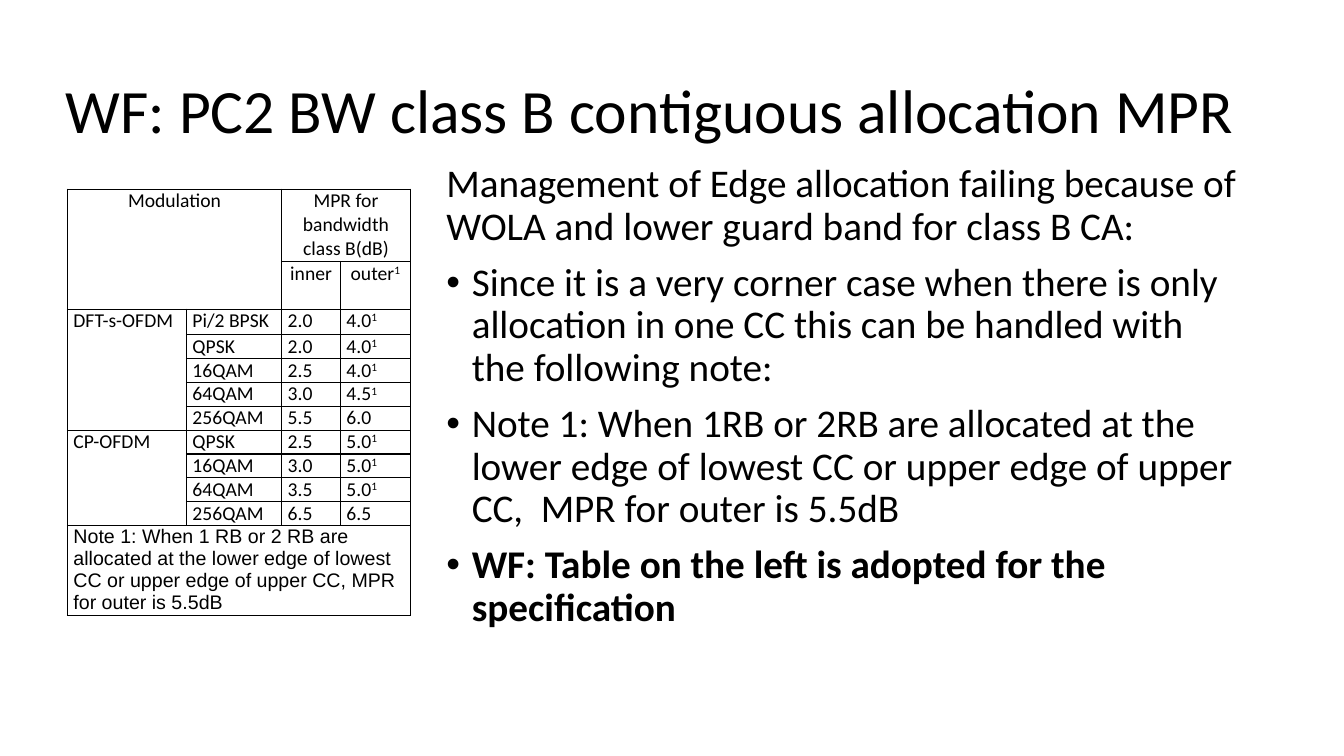
from dataclasses import dataclass

from lxml import etree
from pptx import Presentation
from pptx.dml.color import RGBColor
from pptx.enum import text
from pptx.oxml import ns
from pptx.util import Cm, Pt

COLORS = {"ink": "000000"}
BODY_FONT = "Calibri"
NOTE_FONT = "Arial"
TABLE_SIZE = 14
COL_WIDTHS = [3.0, 2.4, 1.48, 1.76]
ROW_HEIGHTS = [1.82, 1.2, 0.64] + [0.6] * 8 + [2.26]
FIRST_DATA_ROW = 2
BULLET_INDENT = Cm(0.64)


@dataclass
class Entry:
    row: int
    col: int
    label: str
    sup: str = ""
    rows: int = 1
    cols: int = 1
    centred: bool = False
    font: str = BODY_FONT


@dataclass
class Waveform:
    name: str
    levels: list[tuple[str, str, str, str]]


@dataclass
class Point:
    label: str
    bullet: bool = True
    bold: bool = False


WAVEFORMS = [
    Waveform("DFT-s-OFDM", [
        ("Pi/2 BPSK", "2.0", "4.0", "1"),
        ("QPSK", "2.0", "4.0", "1"),
        ("16QAM", "2.5", "4.0", "1"),
        ("64QAM", "3.0", "4.5", "1"),
        ("256QAM", "5.5", "6.0", ""),
    ]),
    Waveform("CP-OFDM", [
        ("QPSK", "2.5", "5.0", "1"),
        ("16QAM", "3.0", "5.0", "1"),
        ("64QAM", "3.5", "5.0", "1"),
        ("256QAM", "6.5", "6.5", ""),
    ]),
]

POINTS = [
    Point("Management of Edge allocation failing because of WOLA and lower "
          "guard band for class B CA:", bullet=False),
    Point("Since it is a very corner case when there is only allocation in "
          "one CC this can be handled with the following note:"),
    Point("Note 1: When 1RB or 2RB are allocated at the lower edge of lowest "
          "CC or upper edge of upper CC,  MPR for outer is 5.5dB"),
    Point("WF: Table on the left is adopted for the specification", bold=True),
]


def table_entries() -> list[Entry]:
    entries = [
        Entry(0, 0, "Modulation", rows=2, cols=2, centred=True),
        Entry(0, 2, "MPR for bandwidth class B(dB)", cols=2, centred=True),
        Entry(1, 2, "inner", centred=True),
        Entry(1, 3, "outer", sup="1", centred=True),
    ]
    row = FIRST_DATA_ROW
    for wave in WAVEFORMS:
        entries.append(Entry(row, 0, wave.name, rows=len(wave.levels)))
        for modulation, inner, outer, sup in wave.levels:
            entries += [Entry(row, 1, modulation), Entry(row, 2, inner),
                        Entry(row, 3, outer, sup)]
            row += 1
    entries.append(Entry(
        row, 0, "Note 1: When 1 RB or 2 RB are allocated at the lower edge of "
        "lowest CC or upper edge of upper CC, MPR for outer is 5.5dB",
        cols=4, font=NOTE_FONT))
    return entries


def add_run(p, label: str, size: float, font: str = BODY_FONT,
            bold: bool = False):
    r = p.add_run()
    r.text = label
    r.font.size = Pt(size)
    r.font.name = font
    r.font.bold = bold
    r.font.color.rgb = RGBColor.from_string(COLORS["ink"])
    return r


def format_cell(cell) -> None:
    cell.margin_left = cell.margin_right = Cm(0.15)
    cell.margin_top = cell.margin_bottom = 0
    tc_pr = cell._tc.get_or_add_tcPr()
    for side in ("lnL", "lnR", "lnT", "lnB"):
        ln = etree.SubElement(tc_pr, ns.qn(f"a:{side}"), w=str(Pt(1)))
        fill = etree.SubElement(ln, ns.qn("a:solidFill"))
        etree.SubElement(fill, ns.qn("a:srgbClr"), val=COLORS["ink"])
    cell.fill.background()
    end = cell.text_frame.paragraphs[0]._p.get_or_add_endParaRPr()
    end.set("sz", str(TABLE_SIZE * 100))


def draw_entry(table, entry: Entry) -> None:
    cell = table.cell(entry.row, entry.col)
    if entry.rows * entry.cols > 1:
        cell.merge(table.cell(entry.row + entry.rows - 1,
                              entry.col + entry.cols - 1))
    p = cell.text_frame.paragraphs[0]
    p.alignment = (text.PP_ALIGN.CENTER if entry.centred
                   else text.PP_ALIGN.LEFT)
    add_run(p, entry.label, TABLE_SIZE, entry.font)
    if entry.sup:
        r = add_run(p, entry.sup, TABLE_SIZE, entry.font)
        r._r.get_or_add_rPr().set("baseline", "30000")


def draw_table(s) -> None:
    frame = s.shapes.add_table(
        len(ROW_HEIGHTS), len(COL_WIDTHS), Cm(1.7), Cm(4.77),
        Cm(sum(COL_WIDTHS)), Cm(sum(ROW_HEIGHTS)))
    table = frame.table
    table.first_row = table.horz_banding = False
    for column, width in zip(table.columns, COL_WIDTHS):
        column.width = Cm(width)
    for row, height in zip(table.rows, ROW_HEIGHTS):
        row.height = Cm(height)
    for cell in table.iter_cells():
        format_cell(cell)
    for entry in table_entries():
        draw_entry(table, entry)


def draw_point(p, point: Point) -> None:
    p.line_spacing = 0.9
    p.space_before = Pt(10)
    if point.bullet:
        p_pr = p._p.get_or_add_pPr()
        p_pr.set("marL", str(BULLET_INDENT))
        p_pr.set("indent", str(-BULLET_INDENT))
        etree.SubElement(p_pr, ns.qn("a:buFont"), typeface=NOTE_FONT)
        etree.SubElement(p_pr, ns.qn("a:buChar"), char="•")
    add_run(p, point.label, 28, bold=point.bold)


def draw_points(s) -> None:
    sp = s.shapes.add_textbox(Cm(11), Cm(4.01), Cm(20.47), Cm(3.43))
    tf = sp.text_frame
    tf.word_wrap = True
    for i, point in enumerate(POINTS):
        draw_point(tf.add_paragraph() if i else tf.paragraphs[0], point)


def draw_title(s) -> None:
    sp = s.shapes.title
    sp.left, sp.top = Cm(1.4), Cm(1.02)
    sp.width, sp.height = Cm(32.08), Cm(3.68)
    tf = sp.text_frame
    tf.vertical_anchor = text.MSO_ANCHOR.MIDDLE
    p = tf.paragraphs[0]
    p.alignment = text.PP_ALIGN.LEFT
    p.line_spacing = 0.9
    add_run(p, "WF: PC2 BW class B contiguous allocation MPR", 44)


def main() -> None:
    prs = Presentation()
    prs.slide_width, prs.slide_height = Cm(33.87), Cm(19.05)
    s = prs.slides.add_slide(prs.slide_layouts.get_by_name("Title Only"))
    draw_title(s)
    draw_table(s)
    draw_points(s)
    prs.save("out.pptx")


if __name__ == "__main__":
    main()
